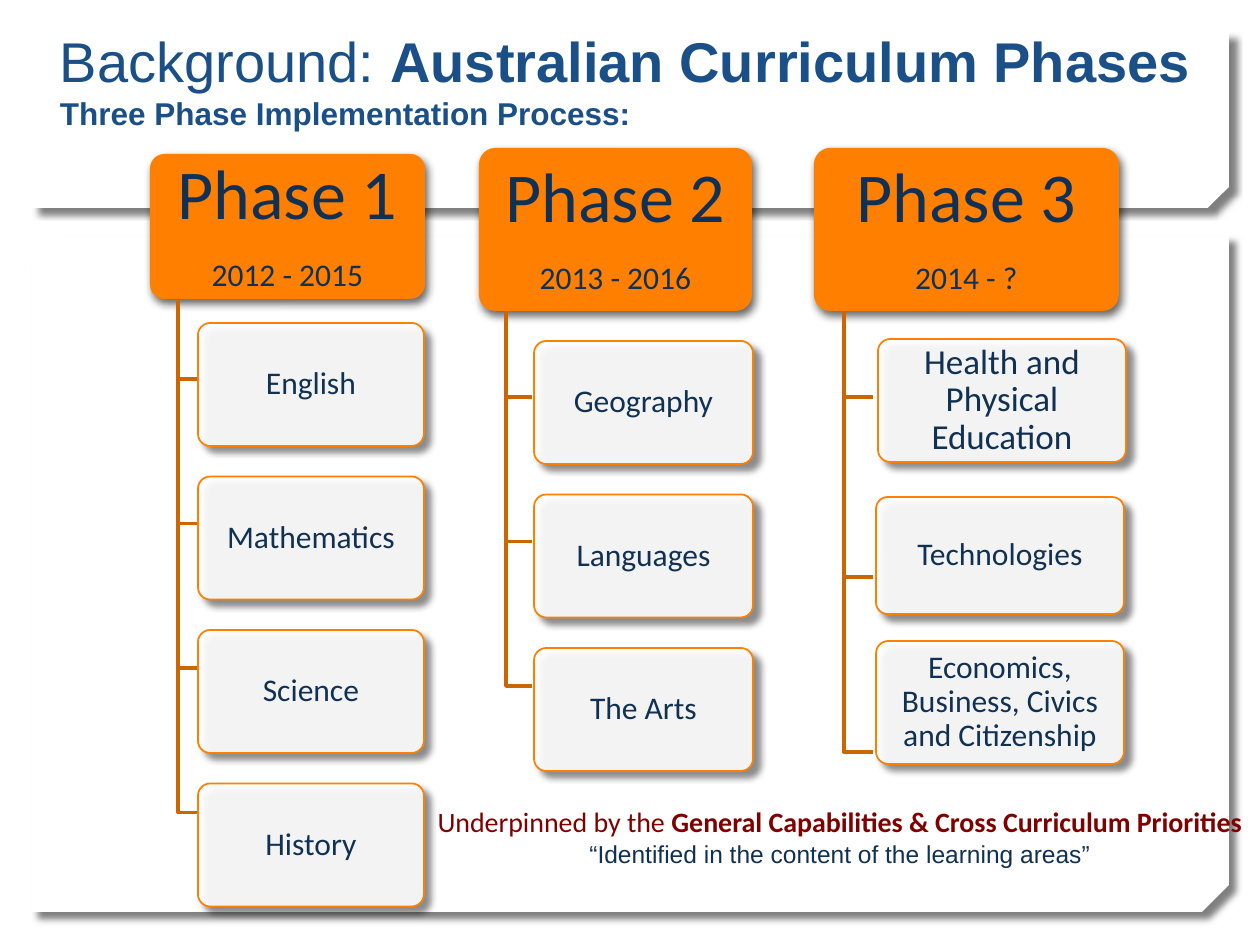
from dataclasses import dataclass
from lxml import etree
from pptx import Presentation
from pptx import util as u
from pptx.dml.color import RGBColor
from pptx.enum import shapes, text
from pptx.oxml.ns import qn

KIND = shapes.MSO_SHAPE
ALIGN = text.PP_ALIGN
ANCHOR = text.MSO_ANCHOR


@dataclass(frozen=True)
class Theme:
    white: str = "FFFFFF"
    black: str = "000000"
    title: str = "1A4F88"
    ink: str = "103154"
    head: str = "FF7F01"
    rail: str = "CC6601"
    note: str = "800000"
    sans: str = "Arial"
    body: str = "Calibri"
    huge: int = 40
    large: int = 32
    mid: int = 20
    base: int = 18
    small: int = 16
    tiny: int = 14


def px(n):
    return u.Emu(round(n * 914400 / 126))


def rgb(hue):
    return RGBColor.from_string(hue)


class Deck:
    def __init__(self, theme):
        self.theme = theme
        self.show = Presentation()
        self.show.slide_width, self.show.slide_height = px(1260), px(945)
        self.slide = self.show.slides.add_slide(self.show.slide_layouts[5])

    def shade(self, shape, alpha, blur, dist, angle):
        shape.shadow.inherit = False
        glow = shape._element.spPr.find(qn("a:effectLst"))
        cast = etree.SubElement(
            glow, qn("a:outerShdw"), blurRad=str(u.Pt(blur)),
            dist=str(u.Pt(dist)), dir=str(angle * 60000), algn="tl", rotWithShape="0")
        hue = etree.SubElement(cast, qn("a:srgbClr"), val=self.theme.black)
        etree.SubElement(hue, qn("a:alpha"), val=str(alpha * 1000))

    def label(self, frame, lines, align, pad, anchor, tight=False):
        frame.word_wrap = True
        frame.auto_size = text.MSO_AUTO_SIZE.NONE
        frame.vertical_anchor = anchor
        frame.margin_left = frame.margin_right = px(pad[0])
        frame.margin_top = frame.margin_bottom = px(pad[1])
        for i, runs in enumerate(lines):
            para = frame.add_paragraph() if i else frame.paragraphs[0]
            para.alignment = align
            if tight:
                para.line_spacing = 0.9
                para.space_after = u.Pt(round(runs[0][1] * 0.35, 1))
            for words, size, face, hue, bold in runs:
                run = para.add_run()
                run.text = words
                font = run.font
                font.size, font.name, font.bold = u.Pt(size), face, bold
                font.color.rgb = rgb(hue)

    def block(self, kind, area, fill, adjust):
        shape = self.slide.shapes.add_shape(kind, *map(px, area))
        for i, value in enumerate(adjust):
            shape.adjustments[i] = value
        shape.fill.solid()
        shape.fill.fore_color.rgb = rgb(fill)
        shape.line.fill.background()
        return shape

    def panel(self, area, snip):
        shape = self.block(KIND.SNIP_2_DIAG_RECTANGLE, area, self.theme.white, (0, snip))
        shape._element.spPr.find(qn("a:xfrm")).set("flipV", "1")
        self.shade(shape, 50, 4, 5, 45)

    def title(self, area, lines):
        shape = self.slide.shapes.title
        shape.left, shape.top, shape.width, shape.height = map(px, area)
        self.slide.shapes._spTree.append(shape._element)
        self.label(shape.text_frame, lines, ALIGN.LEFT, (13, 6), ANCHOR.TOP)

    def head(self, area, name, years):
        t = self.theme
        shape = self.block(KIND.ROUNDED_RECTANGLE, area, t.head, (0.1,))
        self.shade(shape, 60, 5, 3, 60)
        lines = [[(name, t.huge, t.body, t.ink, False)],
                 [(years, t.base, t.body, t.ink, False)]]
        self.label(shape.text_frame, lines, ALIGN.CENTER, (15, 12), ANCHOR.MIDDLE, True)

    def elbow(self, left, top, right, low):
        pen = self.slide.shapes.build_freeform(px(left), px(top))
        pen.add_line_segments([(px(left), px(low)), (px(right), px(low))], close=False)
        shape = pen.convert_to_shape()
        shape.shadow.inherit = False
        shape.fill.background()
        shape.line.color.rgb = rgb(self.theme.rail)
        shape.line.width = u.Pt(2)

    def card(self, area, words, size):
        t = self.theme
        shape = self.block(KIND.ROUNDED_RECTANGLE, area, t.white, (0.1,))
        hue = shape._element.spPr.find(qn("a:solidFill"))[0]
        etree.SubElement(hue, qn("a:alpha"), val="90000")
        shape.line.color.rgb = rgb(t.head)
        shape.line.width = u.Pt(1)
        self.shade(shape, 50, 4, 5, 45)
        self.label(shape.text_frame, [[(words, size, t.body, t.ink, False)]],
                   ALIGN.CENTER, (9, 7), ANCHOR.MIDDLE, True)

    def note(self, area, lines):
        box = self.slide.shapes.add_textbox(*map(px, area))
        self.label(box.text_frame, lines, ALIGN.CENTER, (13, 6), ANCHOR.TOP)

    def phase(self, area, name, years, rail, end, cards):
        self.head(area, name, years)
        for words, box, join, size in cards:
            self.elbow(rail, area[1] + area[3], end, join)
            self.card(box, words, size)


def column(names, left, top, width, join, size):
    return [(name, (left, top + 153.5 * i, width, 123), join + 144.5 * i, size)
            for i, name in enumerate(names)]


def main():
    t = Theme()
    deck = Deck(t)
    deck.panel((32, 236, 1197, 676), 0.04)
    deck.panel((32, 32, 1197, 176), 0.12)
    deck.title((47, 21, 1260, 136), [
        [("Background: ", t.large, t.sans, t.title, False),
         ("Australian Curriculum Phases", t.large, t.sans, t.title, True)],
        [("Three Phase Implementation Process:", t.base, t.sans, t.title, True)]])

    core = column(("English", "Mathematics", "Science", "History"),
                  198, 323, 226, 379, t.base)
    arts = column(("Geography", "Languages", "The Arts"), 534, 341, 219, 397, t.base)
    life = [
        ("Health and Physical Education", (878, 339, 248, 123), 397, t.mid),
        ("Technologies", (876, 497, 248, 117), 577, t.base),
        ("Economics, Business, Civics and Citizenship", (876, 641, 248, 123), 752, t.base)]
    deck.phase((150, 154, 275, 145), "Phase 1", "2012 - 2015", 178, 197, core)
    deck.phase((479, 148, 273, 163), "Phase 2", "2013 - 2016", 506, 532, arts)
    deck.phase((814, 148, 305, 163), "Phase 3", "2014 - ?", 844, 873, life)

    deck.note((420, 799, 840, 77), [
        [("Underpinned by the ", t.small, t.body, t.note, False),
         ("General Capabilities & Cross Curriculum Priorities",
          t.small, t.body, t.note, True)],
        [("“Identified in the content of the learning areas”",
          t.tiny, t.sans, t.ink, False)]])
    deck.show.save("out.pptx")


if __name__ == "__main__":
    main()
